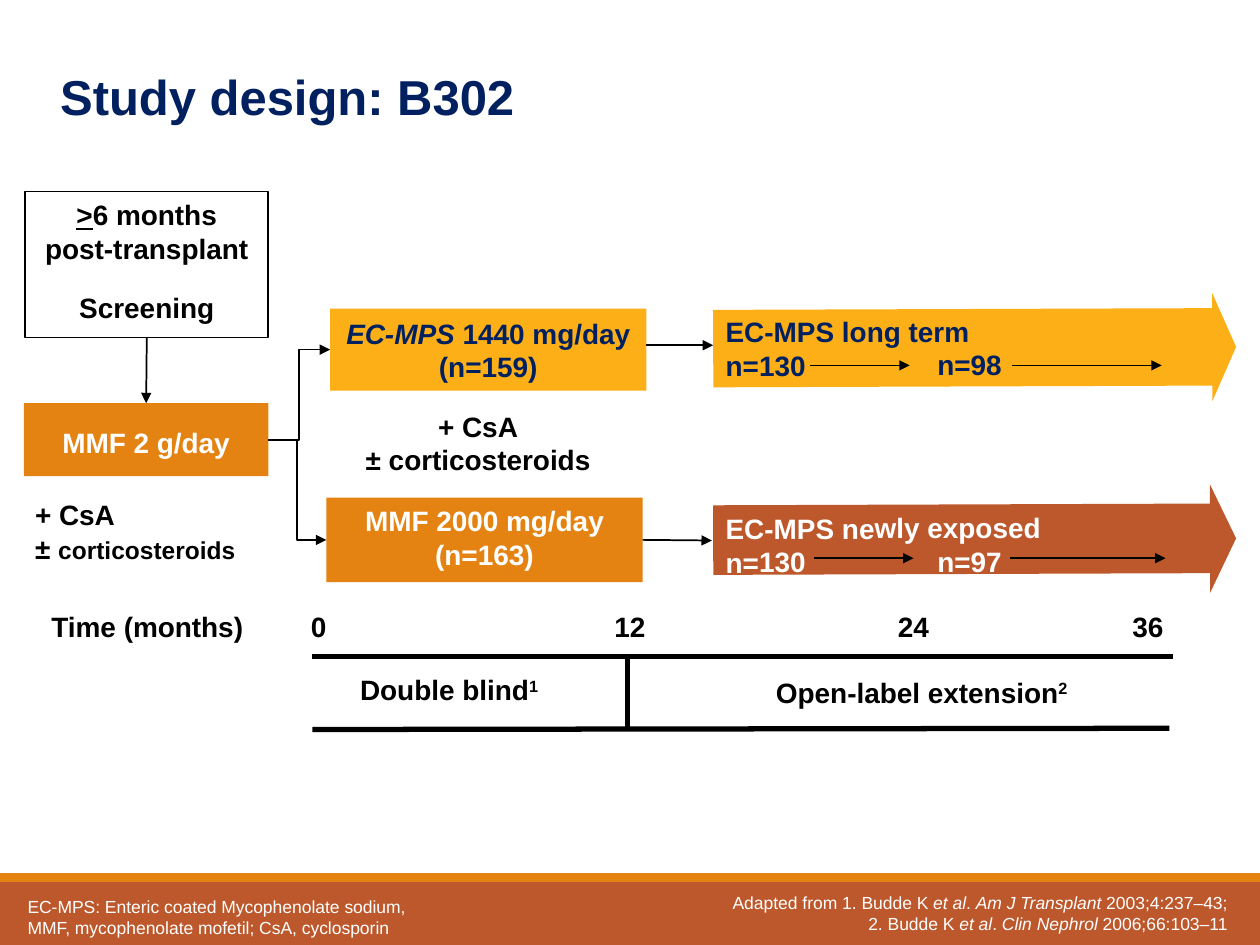
from pptx import Presentation
from pptx.dml.color import RGBColor
from pptx.enum.shapes import MSO_CONNECTOR as LINK, MSO_SHAPE as SHAPE
from pptx.enum.text import MSO_ANCHOR as ANCHOR, PP_ALIGN as ALIGN
from pptx.oxml.ns import qn
from pptx.util import Pt
from lxml.etree import SubElement

PX = 9144  # EMU per px, 100 px to the inch
BLACK, WHITE, NAVY = "000000", "FFFFFF", "002060"
YELLOW, ORANGE, RUST = "FCAF17", "E48312", "BD582C"
TOP, LEFT, BOTTOM, RIGHT = range(4)
ITALIC, UNDERLINE, RAISED = {"italic": True}, {"underline": True}, {"raised": True}


def emu(*lengths):
    return [round(length * PX) for length in lengths]


def rgb(value):
    return RGBColor.from_string(value)


class Deck:
    def __init__(self, width, height, font="Arial"):
        self.prs = Presentation()
        self.prs.slide_width, self.prs.slide_height = emu(width, height)
        self.slide = self.prs.slides.add_slide(self.prs.slide_layouts[6])
        self.font = font

    def set_lines(self, shape, lines, color=BLACK, size=16, bold=True, align=ALIGN.LEFT,
                  anchor=ANCHOR.TOP, gap=0, tab=None, inset=5):
        """Fill a shape with lines; a line is a string or a list of (text, style) pieces.

        gap is the space in points before the last line when there are several.
        """
        frame = shape.text_frame
        frame.word_wrap = True
        frame.vertical_anchor = anchor
        frame.margin_left, frame.margin_right = emu(10, 10)
        frame.margin_top, frame.margin_bottom = emu(inset, 5)
        for number, line in enumerate(lines):
            paragraph = frame.add_paragraph() if number else frame.paragraphs[0]
            paragraph.alignment = align
            if gap and number and number == len(lines) - 1:
                paragraph.space_before = Pt(gap)
            if tab:
                stops = SubElement(paragraph._p.get_or_add_pPr(), qn("a:tabLst"))
                SubElement(stops, qn("a:tab"), pos=str(emu(tab)[0]), algn="l")
            for text, style in [(line, {})] if isinstance(line, str) else line:
                run = paragraph.add_run()
                run.text = text
                font = run.font
                font.name, font.bold = self.font, bold
                font.size = Pt(style.get("size", size))
                font.color.rgb = rgb(color)
                font.italic = style.get("italic")
                font.underline = style.get("underline")
                if style.get("raised"):
                    run._r.get_or_add_rPr().set("baseline", "30000")

    def text(self, box, lines, **style):
        self.set_lines(self.slide.shapes.add_textbox(*emu(*box)), lines, **style)

    def shape(self, box, lines=(), fill=None, outline=None, kind=SHAPE.RECTANGLE, **style):
        shape = self.slide.shapes.add_shape(kind, *emu(*box))
        shape.shadow.inherit = False
        if fill:
            shape.fill.solid()
            shape.fill.fore_color.rgb = rgb(fill)
        else:
            shape.fill.background()
        if outline:
            shape.line.color.rgb = rgb(outline)
            shape.line.width = Pt(1)
        else:
            shape.line.fill.background()
        if lines:
            self.set_lines(shape, lines, **style)
        return shape

    def block_arrow(self, box, shaft, head, lines, fill, **style):
        arrow = self.shape(box, lines, fill, kind=SHAPE.RIGHT_ARROW, tab=168, **style)
        arrow.adjustments[0], arrow.adjustments[1] = shaft, head
        arrow.rotation = 359.8

    def line(self, x1, y1, x2, y2, width=1, head=False, kind=LINK.STRAIGHT):
        line = self.slide.shapes.add_connector(kind, *emu(x1, y1, x2, y2))
        line.line.color.rgb = rgb(BLACK)
        line.line.width = Pt(width)
        properties = line._element.spPr
        if head:
            SubElement(properties.find(qn("a:ln")), qn("a:tailEnd"), type="triangle")
        SubElement(properties, qn("a:effectLst"))
        return line

    def link(self, start, start_side, end, end_side, kind=LINK.STRAIGHT):
        """Arrow joining the side middles of two boxes."""
        line = self.line(0, 0, 0, 0, head=True, kind=kind)
        line.begin_connect(start, start_side)
        line.end_connect(end, end_side)


def main():
    deck = Deck(1000, 750)
    deck.shape((0, 700, 1000, 50), fill=RUST)
    deck.shape((0, 693, 1000, 7), fill=ORANGE)
    deck.text((38, 48, 900, 70), ["Study design: B302"], color=NAVY, size=28)

    # Screening and run-in
    screening = deck.shape(
        (20, 152, 193, 116),
        [[(">", UNDERLINE), ("6 months", {})], "post-transplant", "Screening"],
        outline=BLACK, align=ALIGN.CENTER, gap=14.4)
    run_in = deck.shape((19, 320, 194, 58), ["MMF 2 g/day"], ORANGE,
                        color=WHITE, align=ALIGN.CENTER, inset=18)
    deck.text((18, 390, 198, 64),
              ["+ CsA", [("± ", {}), ("corticosteroids", {"size": 14})]])

    # Randomised arms
    ec_mps = deck.shape((262, 245, 251, 65),
                        [[("EC-MPS ", ITALIC), ("1440 mg/day", {})], "(n=159)"],
                        YELLOW, color=NAVY, align=ALIGN.CENTER, anchor=ANCHOR.MIDDLE)
    mmf = deck.shape((259, 395, 251, 67), ["MMF 2000 mg/day (n=163)"], ORANGE,
                     color=WHITE, align=ALIGN.CENTER)
    deck.text((256, 320, 247, 64), ["+ CsA", "± corticosteroids"], align=ALIGN.CENTER)
    deck.link(screening, BOTTOM, run_in, TOP)
    for arm in (ec_mps, mmf):
        deck.link(run_in, RIGHT, arm, LEFT, LINK.ELBOW)

    # Extension
    deck.block_arrow((566, 233, 415, 86), 0.715, 0.22,
                     ["EC-MPS long term", "n=130\tn=98"], YELLOW,
                     color=NAVY, anchor=ANCHOR.MIDDLE)
    deck.block_arrow((566, 385, 415, 86), 0.642, 0.24,
                     ["EC-MPS newly exposed", "n=130\tn=97"], RUST, color=WHITE)
    deck.line(513, 274, 566, 274, head=True)
    deck.line(510, 429, 565, 429, head=True).begin_connect(mmf, RIGHT)
    for x1, x2, y in ((643, 722, 290), (803, 922, 290), (646, 725, 443), (802, 925, 443)):
        deck.line(x1, y, x2, y, head=True)

    # Timeline
    deck.text((31, 479, 221, 37), ["Time (months)"])
    for month, center in (("0", 253), ("12", 500), ("24", 725), ("36", 911)):
        deck.text((center - 77, 479, 154, 37), [month], align=ALIGN.CENTER)
    deck.line(248, 521, 931, 521, width=3)
    deck.line(248, 579, 928, 578, width=3)
    deck.line(498, 521, 498, 579, width=3)
    for box, phase, reference in (((223, 529, 267, 37), "Double blind", "1"),
                                  ((577, 531, 309, 37), "Open-label extension", "2")):
        deck.text(box, [[(phase, {}), (reference, RAISED)]], align=ALIGN.CENTER)

    # Footer
    footer = {"color": WHITE, "size": 10, "bold": False}
    deck.text((12, 706, 351, 44),
              ["EC-MPS: Enteric coated Mycophenolate sodium, "
               "MMF, mycophenolate mofetil; CsA, cyclosporin"], **footer)
    citations = (("Adapted from 1. Budde K ", "Am J Transplant", " 2003;4:237–43;"),
                 ("2. Budde K ", "Clin Nephrol", " 2006;66:103–11"))
    deck.text((461, 703, 523, 37),
              [[(author, {}), ("et al", ITALIC), (". ", {}), (journal, ITALIC), (issue, {})]
               for author, journal, issue in citations],
              align=ALIGN.RIGHT, **footer)

    deck.prs.save("out.pptx")


if __name__ == "__main__":
    main()
